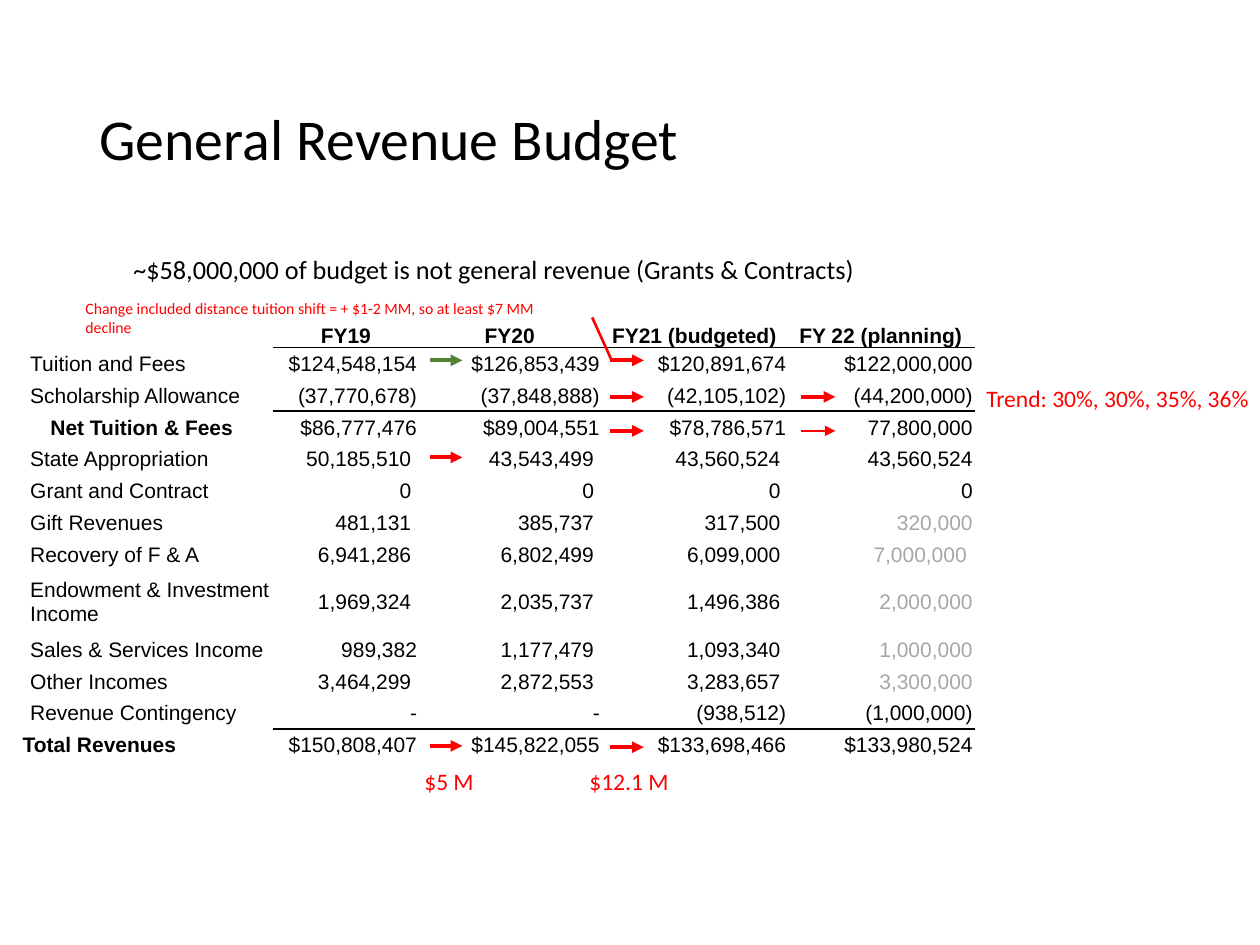
from lxml import etree
from pptx import Presentation
from pptx.dml.color import RGBColor
from pptx.enum.shapes import MSO_CONNECTOR
from pptx.enum.text import MSO_ANCHOR as Anchor, MSO_AUTO_SIZE as AutoSize, PP_ALIGN as Align
from pptx.oxml.ns import qn
from pptx.util import Inches, Pt

BLACK, WHITE, RED, GREEN, GREY = "000000", "FFFFFF", "FF0000", "548235", "A6A6A6"

COLUMN_WIDTHS = [2, 1.15, 1.45, 1.48, 1.48]
BUDGET = [
    ["", "FY19", "FY20", "FY21 (budgeted)", "FY 22 (planning)"],
    ["Tuition and Fees", "$124,548,154", "$126,853,439", "$120,891,674", "$122,000,000"],
    ["Scholarship Allowance", "(37,770,678)", "(37,848,888)", "(42,105,102)", "(44,200,000)"],
    ["Net Tuition & Fees", "$86,777,476", "$89,004,551", "$78,786,571", "77,800,000"],
    ["State Appropriation", "50,185,510 ", "43,543,499 ", "43,560,524 ", "43,560,524"],
    ["Grant and Contract", "0 ", "0 ", "0 ", "0"],
    ["Gift Revenues", "481,131 ", "385,737 ", "317,500 ", "320,000"],
    ["Recovery of F & A", "6,941,286 ", "6,802,499 ", "6,099,000 ", "7,000,000 "],
    ["Endowment & Investment Income", "1,969,324 ", "2,035,737 ", "1,496,386 ", "2,000,000"],
    ["Sales & Services Income", "989,382", "1,177,479 ", "1,093,340 ", "1,000,000"],
    ["Other Incomes", "3,464,299 ", "2,872,553 ", "3,283,657 ", "3,300,000"],
    ["Revenue Contingency", "-", "-", "(938,512)", "(1,000,000)"],
    ["Total Revenues", "$150,808,407", "$145,822,055", "$133,698,466", "$133,980,524"],
]
NET, ENDOWMENT, TOTAL = 3, 8, 12
RULED_ROWS = (0, 2, 11)  # rows with a rule underneath
ESTIMATED_ROWS = range(6, 11)  # last column still an estimate
LABEL_INDENT = {NET: 0.23, TOTAL: 0.01}

# Arrows between the years: gap start, gap end, then height, colour and weight
ARROW_GAPS = [
    (3.41, 3.67, [(2.86, GREEN, 2.25), (3.63, RED, 2.25), (5.92, RED, 2.25)]),
    (4.84, 5.11, [(2.86, RED, 2.25), (3.15, RED, 2.25), (3.42, RED, 2.25), (5.93, RED, 2.25)]),
    (6.36, 6.63, [(3.15, RED, 2.25), (3.42, RED, 1)]),
]


def color(value):
    return RGBColor.from_string(value)


def style_run(span, size, font, value, bold=False):
    span.font.size = Pt(size)
    span.font.name = font
    span.font.bold = bold
    span.font.color.rgb = color(value)


def add_text(page, box, text, size, value=BLACK, wrap=False):
    shape = page.shapes.add_textbox(*map(Inches, box))
    frame = shape.text_frame
    frame.text = text
    frame.word_wrap = wrap
    frame.auto_size = AutoSize.SHAPE_TO_FIT_TEXT
    style_run(frame.paragraphs[0].runs[0], size, "Calibri", value)
    return shape


def add_line(page, start, end, value, weight, arrow=True):
    line = page.shapes.add_connector(MSO_CONNECTOR.STRAIGHT, *map(Inches, start + end))
    line.line.color.rgb = color(value)
    line.line.width = Pt(weight)
    if arrow:
        etree.SubElement(line.line._get_or_add_ln(), qn("a:tailEnd"), type="triangle")
    etree.SubElement(line._element.spPr, qn("a:effectLst"))


def add_rule(cell, side):
    """Draw a black border on one side; borders come before the fill."""
    border = etree.Element(qn("a:" + side), w=str(Pt(1)))
    fill = etree.SubElement(border, qn("a:solidFill"))
    etree.SubElement(fill, qn("a:srgbClr"), val=BLACK)
    cell._tc.get_or_add_tcPr().insert(0, border)


def format_cell(cell, text, row, column):
    cell.fill.solid()
    cell.fill.fore_color.rgb = color(WHITE)
    cell.margin_left = cell.margin_right = cell.margin_top = Inches(0.01)
    cell.margin_bottom = 0
    cell.vertical_anchor = Anchor.MIDDLE if row else Anchor.BOTTOM
    if column == 0:
        cell.margin_left = Inches(LABEL_INDENT.get(row, 0.07))
    else:
        if row in RULED_ROWS:
            add_rule(cell, "lnB")
        if row - 1 in RULED_ROWS:
            add_rule(cell, "lnT")
    if not text:
        return
    cell.text_frame.text = text
    para = cell.text_frame.paragraphs[0]
    if column:
        para.alignment = Align.RIGHT if row else Align.CENTER
    bold = row == 0 or (column == 0 and row in (NET, TOTAL))
    estimated = column == 4 and row in ESTIMATED_ROWS
    style_run(para.runs[0], 12, "Arial", GREY if estimated else BLACK, bold)


def add_budget_table(page, box):
    table = page.shapes.add_table(len(BUDGET), len(COLUMN_WIDTHS), *map(Inches, box)).table
    table.first_row = table.horz_banding = False
    for column, width in zip(table.columns, COLUMN_WIDTHS):
        column.width = Inches(width)
    # The header is fixed; the endowment row counts as two body lines
    header = 0.44
    line_height = (box[3] - header) / len(BUDGET)
    for row, texts in enumerate(BUDGET):
        height = line_height * (2 if row == ENDOWMENT else 1)
        table.rows[row].height = Inches(height if row else header)
        for column, text in enumerate(texts):
            format_cell(table.cell(row, column), text, row, column)


def add_heading(page, box):
    title = add_text(page, box, "General Revenue Budget", 33, wrap=True)
    title.text_frame.auto_size = AutoSize.NONE
    title.text_frame.vertical_anchor = Anchor.MIDDLE
    title.text_frame.paragraphs[0].line_spacing = 0.9
    add_text(page, (0.96, 1.96, 5.98, 0.35),
             "~$58,000,000 of budget is not general revenue (Grants & Contracts)", 15)


def add_remarks(page):
    # Tuition remark and the line leading to its arrow
    add_text(page, (0.58, 2.32, 4.12, 0.4),
             "Change included distance tuition shift = + $1-2 MM, so at least $7 MM decline",
             9, RED, wrap=True)
    add_line(page, (4.7, 2.52), (4.85, 2.85), RED, 1.5, arrow=False)

    # Year-on-year changes and trend
    add_text(page, (3.27, 6.04, 0.6, 0.33), "$5 M", 13.5, RED)
    add_text(page, (4.58, 6.04, 0.84, 0.33), "$12.1 M", 13.5, RED)
    add_text(page, (7.73, 3, 2.31, 0.33), "Trend: 30%, 30%, 35%, 36%", 13.5, RED)

    for left, right, arrows in ARROW_GAPS:
        for y, value, weight in arrows:
            add_line(page, (left, y), (right, y), value, weight)


def main():
    deck = Presentation()
    deck.slide_width, deck.slide_height = Inches(10), Inches(7.5)
    page = deck.slides.add_slide(deck.slide_layouts[6])
    add_heading(page, (0.69, 0.4, 8.62, 1.45))
    add_budget_table(page, (0.17, 2.32, 7.56, 3.72))
    add_remarks(page)
    deck.save("out.pptx")


if __name__ == "__main__":
    main()
